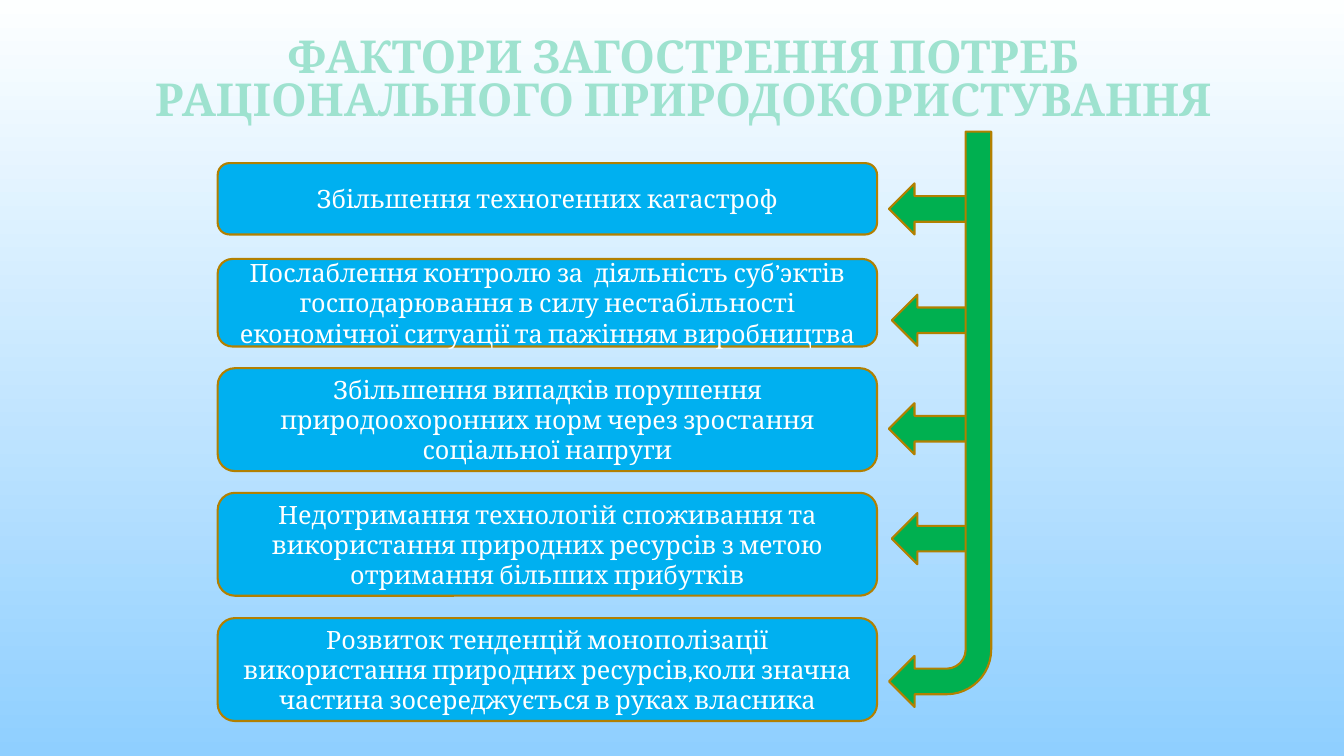
from pptx import Presentation
from pptx.dml.color import RGBColor
from pptx.enum.shapes import MSO_SHAPE as SHAPE
from pptx.enum.text import MSO_ANCHOR as ANCHOR, PP_ALIGN as ALIGN
from pptx.util import Pt

COLORS = {
    "sky_top": "FDFFFF",
    "sky_bottom": "8FCFFF",
    "title": "9EE2CF",
    "factor": "00B0F0",
    "arrow": "00B050",
    "outline": "B28000",
    "factor_text": "FFFFFF",
}
FONT = "Cambria"
TITLE = "ФАКТОРИ ЗАГОСТРЕННЯ ПОТРЕБ РАЦІОНАЛЬНОГО ПРИРОДОКОРИСТУВАННЯ"

FACTOR_LEFT, FACTOR_WIDTH = 155.5, 471
# top, height, text
FACTORS = [
    (116.5, 51, "Збільшення техногенних катастроф"),
    (185, 62.5, "Послаблення контролю за  діяльність суб’эктів господарювання "
     "в силу нестабільності економічної ситуації та пажінням виробництва"),
    (263, 73.5, "Збільшення випадків порушення природоохоронних норм "
     "через зростання соціальної напруги"),
    (352, 73.5, "Недотримання технологій споживання та використання "
     "природних ресурсів з метою отримання більших прибутків"),
    (441.5, 73.5, "Розвиток тенденцій монополізації використання природних "
     "ресурсів,коли значна частина зосереджується в руках власника"),
]
ARROW_WIDTH, ARROW_HEIGHT = 57, 36.5
ARROWS = [(635, 131), (637, 210.5), (635, 288), (637, 366.5)]  # left, top


def rgb(name):
    return RGBColor.from_string(COLORS[name])


def paint_sky(slide):
    fill = slide.background.fill
    fill.gradient()
    fill.gradient_angle = 270
    for stop, name in zip(fill.gradient_stops, ("sky_top", "sky_bottom")):
        stop.color.rgb = rgb(name)


def write(shape, text, *, size, color, bold=False, spacing=1.0):
    frame = shape.text_frame
    frame.word_wrap = True
    frame.vertical_anchor = ANCHOR.MIDDLE
    paragraph = frame.paragraphs[0]
    paragraph.alignment = ALIGN.CENTER
    paragraph.line_spacing = spacing
    run = paragraph.add_run()
    run.text = text
    run.font.name = FONT
    run.font.size = Pt(size)
    run.font.bold = bold
    run.font.color.rgb = rgb(color)


def add_outlined(slide, kind, left, top, width, height, *, fill, rotation=0):
    shape = slide.shapes.add_shape(kind, Pt(left), Pt(top), Pt(width), Pt(height))
    shape.shadow.inherit = False
    shape.rotation = rotation
    shape.fill.solid()
    shape.fill.fore_color.rgb = rgb(fill)
    shape.line.color.rgb = rgb("outline")
    shape.line.width = Pt(1.5)
    return shape


def add_title(slide):
    title = slide.shapes.add_textbox(Pt(70), Pt(15), Pt(836), Pt(87))
    write(title, TITLE, size=32.4, color="title", bold=True, spacing=0.8)


def add_factor(slide, top, height, text):
    factor = add_outlined(slide, SHAPE.ROUNDED_RECTANGLE, FACTOR_LEFT, top,
                          FACTOR_WIDTH, height, fill="factor")
    write(factor, text, size=18, color="factor_text")


def add_arrow(slide, kind, left, top, width, height):
    """Add a green arrow turned to point left."""
    add_outlined(slide, kind, left, top, width, height, fill="arrow", rotation=180)


def main():
    deck = Presentation()
    deck.slide_width, deck.slide_height = Pt(960), Pt(540)
    slide = deck.slides.add_slide(deck.slide_layouts[6])
    paint_sky(slide)
    add_title(slide)
    for top, height, text in FACTORS:
        add_factor(slide, top, height, text)
    for left, top in ARROWS:
        add_arrow(slide, SHAPE.RIGHT_ARROW, left, top, ARROW_WIDTH, ARROW_HEIGHT)
    add_arrow(slide, SHAPE.BENT_ARROW, 635, 94, 73, 411)
    deck.save("out.pptx")


if __name__ == "__main__":
    main()
